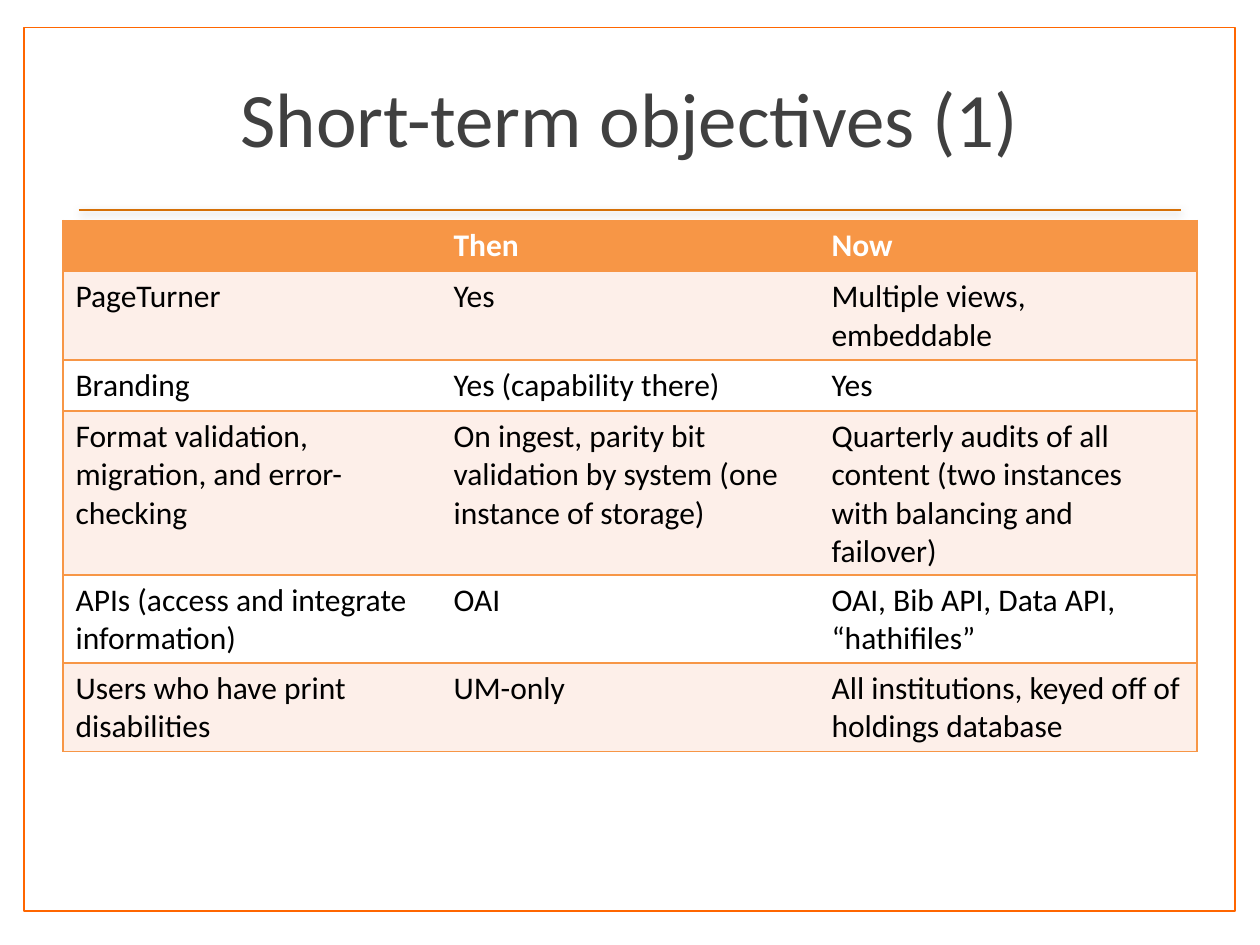
from dataclasses import dataclass

from lxml import etree
from pptx import Presentation
from pptx import util as u
from pptx.dml.color import RGBColor
from pptx.enum import shapes, text
from pptx.oxml import ns

Pt = u.Pt


@dataclass(frozen=True)
class Theme:
    """Colours, font and type sizes of the slide."""
    font: str = "Calibri"
    title_size: int = 44
    table_size: int = 18
    title: str = "404040"
    ink: str = "000000"
    paper: str = "FFFFFF"
    frame: str = "FF6600"
    rule: str = "D57007"
    accent: str = "F79646"
    band: str = "FDEFE9"


THEME = Theme()
ROWS = [
    ("", "Then", "Now"),
    ("PageTurner", "Yes", "Multiple views, embeddable"),
    ("Branding", "Yes (capability there)", "Yes"),
    ("Format validation, migration, and error-checking",
     "On ingest, parity bit validation by system (one instance of storage)",
     "Quarterly audits of all content (two instances with balancing and failover)"),
    ("APIs (access and integrate information)", "OAI",
     "OAI, Bib API, Data API, “hathifiles”"),
    ("Users who have print disabilities", "UM-only",
     "All institutions, keyed off of holdings database"),
]


def rgb(value):
    """Turn a hex string into a colour."""
    return RGBColor.from_string(value)


def add_element(parent, tag, **attributes):
    """Append a DrawingML element to its parent."""
    return etree.SubElement(parent, ns.qn(tag), attributes)


def add_run(paragraph, words, size, color, bold=False):
    """Add one styled run to a paragraph."""
    run = paragraph.add_run()
    run.text = words
    run.font.name = THEME.font
    run.font.size = Pt(size)
    run.font.bold = bold
    run.font.color.rgb = rgb(color)


def add_frame(slide):
    """Draw the thin frame around the slide."""
    frame = slide.shapes.add_shape(
        shapes.MSO_SHAPE.RECTANGLE, Pt(13.75), Pt(15.75), Pt(692), Pt(504.75))
    frame.shadow.inherit = False
    frame.fill.solid()
    frame.fill.fore_color.rgb = rgb(THEME.paper)
    frame.line.color.rgb = rgb(THEME.frame)
    frame.line.width = Pt(1)


def add_rule(slide):
    """Draw the rule under the title with its soft shadow."""
    rule = slide.shapes.add_connector(
        shapes.MSO_CONNECTOR.STRAIGHT, Pt(45), Pt(120), Pt(675), Pt(120))
    rule.line.color.rgb = rgb(THEME.rule)
    rule.line.width = Pt(1)
    effects = add_element(rule._element.spPr, "a:effectLst")
    shadow = add_element(effects, "a:outerShdw", blurRad=str(Pt(5)), dist=str(Pt(1.8)),
                         dir="5400000", rotWithShape="0")
    color = add_element(shadow, "a:srgbClr", val=THEME.ink)
    add_element(color, "a:alpha", val="35000")


def add_title(slide, words):
    """Add the centred slide title."""
    box = slide.shapes.add_textbox(Pt(36), Pt(21.6), Pt(648), Pt(90))
    frame = box.text_frame
    frame.word_wrap = True
    frame.vertical_anchor = text.MSO_ANCHOR.MIDDLE
    paragraph = frame.paragraphs[0]
    paragraph.alignment = text.PP_ALIGN.CENTER
    add_run(paragraph, words, THEME.title_size, THEME.title)


def set_borders(cell, drawn_sides):
    """Draw the named sides of a cell and hide the others."""
    properties = cell._tc.get_or_add_tcPr()
    for side in "LRTB":
        line = add_element(properties, f"a:ln{side}", w=str(Pt(1)))
        if side in drawn_sides:
            fill = add_element(line, "a:solidFill")
            add_element(fill, "a:srgbClr", val=THEME.accent)
        else:
            add_element(line, "a:noFill")


def add_table(slide, rows):
    """Add the banded comparison table with a bold header."""
    column_count = len(rows[0])
    table = slide.shapes.add_table(
        len(rows), column_count, Pt(36), Pt(126), Pt(648), Pt(29.2 * len(rows))).table
    for row_index, row in enumerate(rows):
        header = row_index == 0
        fill = THEME.accent if header else (THEME.paper, THEME.band)[row_index % 2]
        for column_index, words in enumerate(row):
            cell = table.cell(row_index, column_index)
            outer = {0: "L", column_count - 1: "R"}.get(column_index, "")
            set_borders(cell, "TB" + outer)
            cell.fill.solid()
            cell.fill.fore_color.rgb = rgb(fill)
            if words:
                add_run(cell.text_frame.paragraphs[0], words, THEME.table_size,
                        THEME.paper if header else THEME.ink, header)


def main():
    """Build and save the slide."""
    presentation = Presentation()
    presentation.slide_width, presentation.slide_height = Pt(720), Pt(540)
    slide = presentation.slides.add_slide(presentation.slide_layouts[6])
    add_frame(slide)
    add_rule(slide)
    add_title(slide, "Short-term objectives (1)")
    add_table(slide, ROWS)
    presentation.save("out.pptx")


if __name__ == "__main__":
    main()
